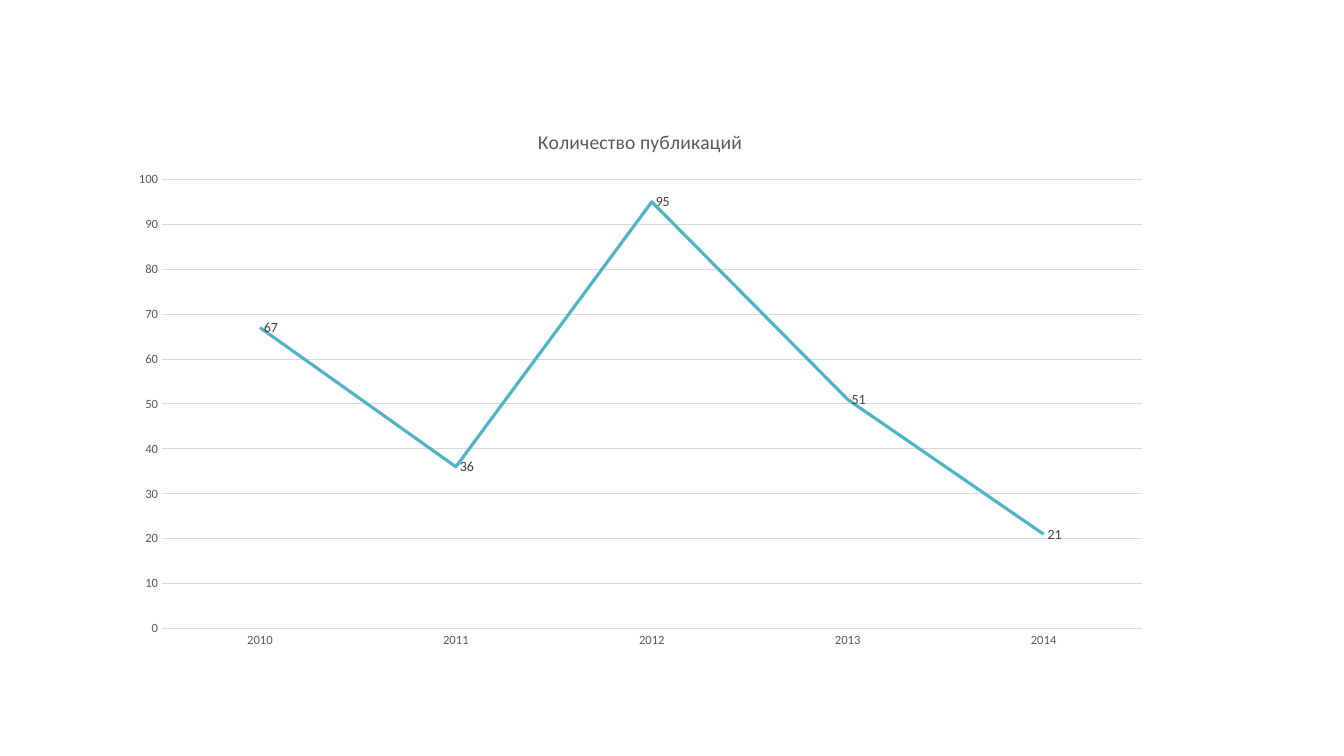
from pptx import Presentation
from pptx.chart.data import CategoryChartData
from pptx.dml.color import RGBColor
from pptx.enum.chart import XL_CHART_TYPE, XL_LABEL_POSITION, XL_MARKER_STYLE, XL_TICK_MARK
from pptx.util import Inches, Pt

LINE_CHART = XL_CHART_TYPE.LINE
LABEL_RIGHT = XL_LABEL_POSITION.RIGHT
NO_MARKER = XL_MARKER_STYLE.NONE
NO_TICK = XL_TICK_MARK.NONE

TITLE = "Количество публикаций"
PUBLICATIONS = {"2010": 67, "2011": 36, "2012": 95, "2013": 51, "2014": 21}
TEXT_GREY, LABEL_GREY, RULE_GREY, TEAL = "595959", "404040", "D9D9D9", "50B4C8"


def style_font(font, size, color):
    values = {"name": "Calibri", "size": Pt(size), "bold": False}
    for name, value in values.items():
        setattr(font, name, value)
    font.color.rgb = RGBColor.from_string(color)


def style_line(line, width, color):
    line.width = Pt(width)
    line.color.rgb = RGBColor.from_string(color)


# Page
deck = Presentation()
deck.slide_width, deck.slide_height = Inches(13.33), Inches(7.5)
page = deck.slides.add_slide(deck.slide_layouts[6])

# Line chart
data = CategoryChartData()
data.categories = list(PUBLICATIONS)
data.add_series(TITLE, list(PUBLICATIONS.values()))
frame = page.shapes.add_chart(
    LINE_CHART, Inches(1.17), Inches(1.08), Inches(10.36), Inches(5.45), data
)
chart = frame.chart
style_font(chart.font, 10, "000000")
chart.has_legend = False

# Title
chart.has_title = True
chart.chart_title.include_in_layout = False
title_para = chart.chart_title.text_frame.paragraphs[0]
title_span = title_para.add_run()
title_span.text = TITLE
style_font(title_span.font, 14, TEXT_GREY)

# Axes and gridlines
years, counts = chart.category_axis, chart.value_axis
for axis in (years, counts):
    axis.major_tick_mark = axis.minor_tick_mark = NO_TICK
    style_font(axis.tick_labels.font, 9, TEXT_GREY)
style_line(years.format.line, 0.75, RULE_GREY)
counts.format.line.fill.background()
counts.minimum_scale, counts.maximum_scale, counts.major_unit = 0, 100, 10
counts.has_major_gridlines = True
style_line(counts.major_gridlines.format.line, 0.75, RULE_GREY)

# Series and value labels
plot = chart.plots[0]
plot.vary_by_categories = False
series = plot.series[0]
series.smooth = False
series.marker.style = NO_MARKER
style_line(series.format.line, 2.25, TEAL)
labels = series.data_labels
labels.show_value = True
labels.position = LABEL_RIGHT
style_font(labels.font, 10, LABEL_GREY)

deck.save("out.pptx")
